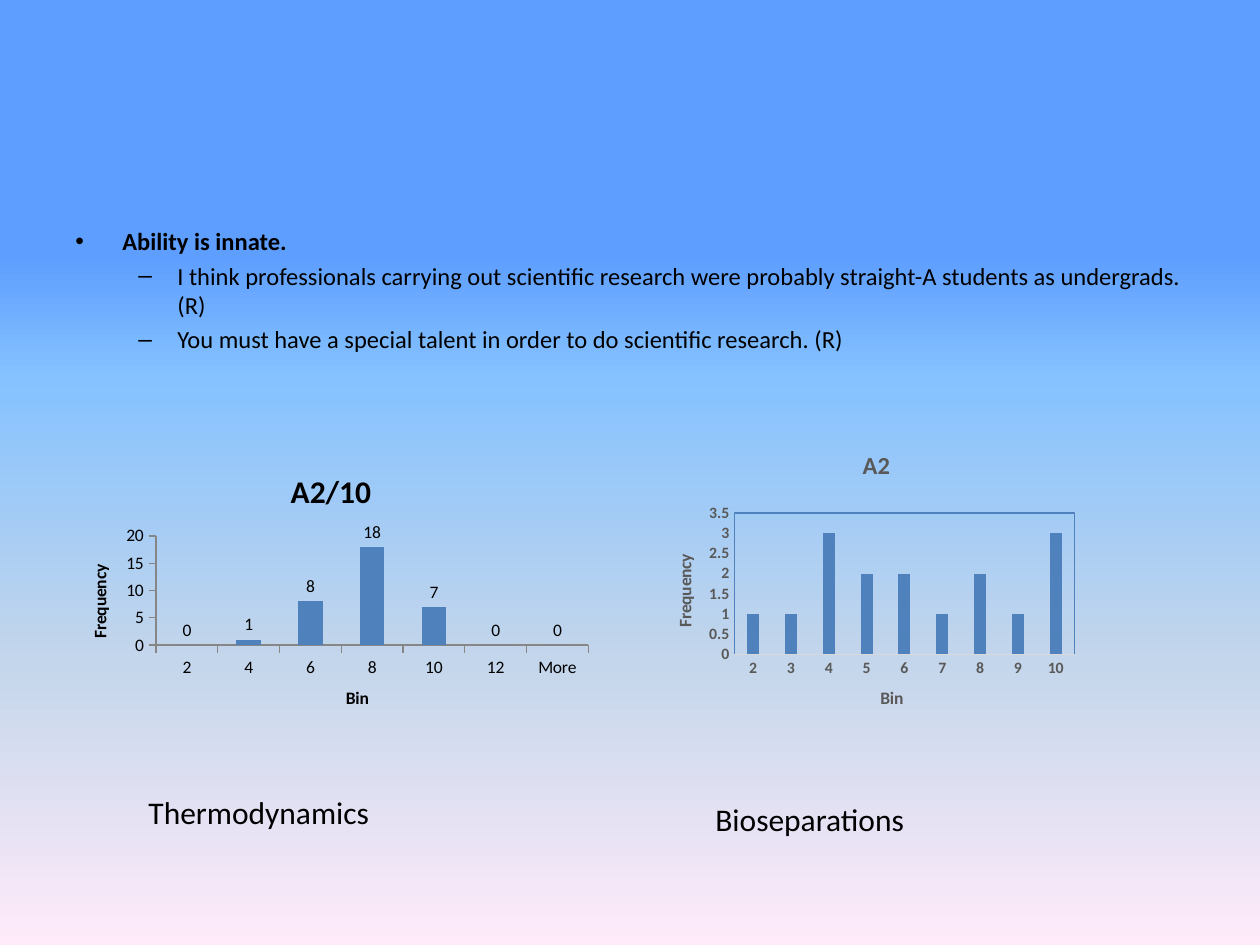
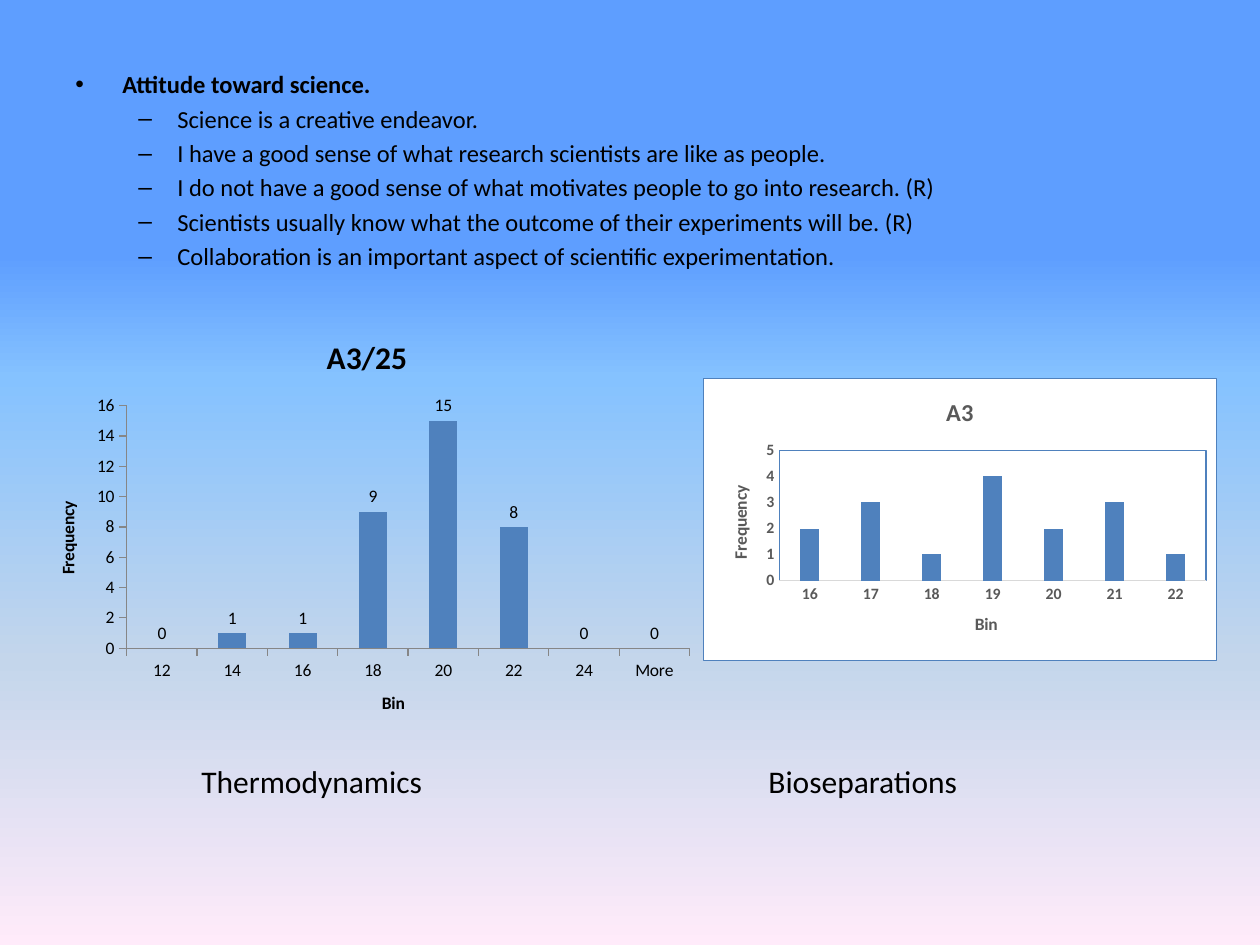
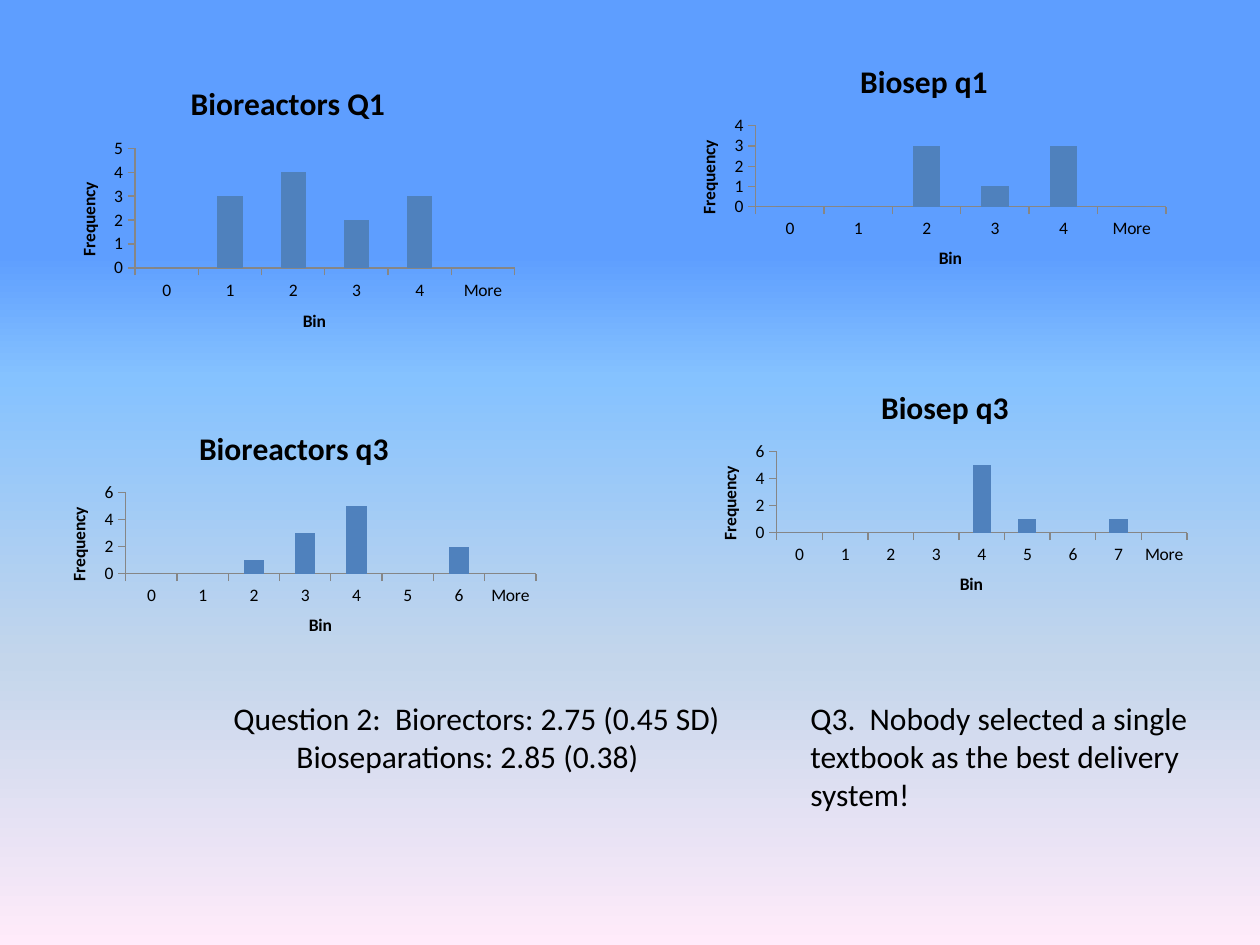
import pptx
import pptx.chart.data
import pptx.dml.color
import pptx.enum.chart
import pptx.enum.text
import pptx.oxml
import pptx.oxml.ns
import pptx.util
from dataclasses import dataclass

PX = 914400 / 126
NAMESPACES = pptx.oxml.ns.nsdecls("a", "c")
qn = pptx.oxml.ns.qn


@dataclass(frozen=True)
class Theme:
    font: str = "Calibri"
    ink: str = "000000"
    bar: str = "4F81BD"
    axis: str = "868686"
    sky: tuple = ((12, "5E9EFF"), (27, "5E9EFF"), (40, "85C2FF"),
                  (70, "C4D6EB"), (100, "FFEBFA"))
    caption_size: int = 18
    body_size: int = 14
    axis_title_size: int = 10


@dataclass(frozen=True)
class ChartStyle:
    ink: str
    title_size: int
    label_size: int
    bold_labels: bool
    gap: int
    overlap: int
    ticks: object
    category_line: str
    value_line: str
    plot_border: str


THEME = Theme()
TICK = pptx.enum.chart.XL_TICK_MARK
CLASSIC = ChartStyle(THEME.ink, 18, 10, False, 150, 0, TICK.OUTSIDE,
                     THEME.axis, THEME.axis, None)
MODERN = ChartStyle("595959", 14, 9, True, 219, -27, TICK.NONE,
                    "D9D9D9", None, THEME.bar)


# Shared helpers
def px(length):
    return pptx.util.Emu(round(length * PX))


def place(box):
    return [px(length) for length in box]


def rgb(value):
    return pptx.dml.color.RGBColor.from_string(value)


def style_font(font, size, color=THEME.ink, bold=False):
    font.name = THEME.font
    font.size = pptx.util.Pt(size)
    font.bold = bold
    font.color.rgb = rgb(color)


def paint_background(master):
    fill = master.background.fill
    fill.gradient()
    fill.gradient_angle = 270  # top to bottom
    stops = fill.gradient_stops[0]._gs.getparent()
    for stop in list(stops):
        stops.remove(stop)
    for percent, color in THEME.sky:
        stops.append(pptx.oxml.parse_xml(
            f'<a:gs {NAMESPACES} pos="{percent * 1000}"><a:srgbClr val="{color}"/></a:gs>'))


# Text
def add_text(slide, box, lines):
    frame = slide.shapes.add_textbox(*place(box)).text_frame
    frame.word_wrap = True
    for number, line in enumerate(lines):
        paragraph = frame.add_paragraph() if number else frame.paragraphs[0]
        paragraph.text = line
    return frame


def add_caption(slide, box, *lines):
    frame = add_text(slide, box, lines)
    frame.auto_size = pptx.enum.text.MSO_AUTO_SIZE.SHAPE_TO_FIT_TEXT
    for paragraph in frame.paragraphs:
        style_font(paragraph.font, THEME.caption_size)


def add_statements(slide, top, heading, *statements):
    frame = add_text(slide, (63, top, 1134, 624), (heading, *statements))
    for number, paragraph in enumerate(frame.paragraphs):
        is_heading = number == 0
        style_font(paragraph.font, THEME.body_size, bold=is_heading)
        paragraph.level = 0 if is_heading else 1
        paragraph.space_before = pptx.util.Pt(2.8)
        margin, hang, bullet = (47, 47, "•") if is_heading else (102, 39, "–")
        properties = paragraph._p.get_or_add_pPr()
        properties.set("marL", str(px(margin)))
        properties.set("indent", str(-px(hang)))
        properties.append(pptx.oxml.parse_xml(f'<a:buFont {NAMESPACES} typeface="Arial"/>'))
        properties.append(pptx.oxml.parse_xml(f'<a:buChar {NAMESPACES} char="{bullet}"/>'))


# Charts
def area_format(fill=None, border=None):
    def paint(color):
        if color:
            return f'<a:solidFill><a:srgbClr val="{color}"/></a:solidFill>'
        return "<a:noFill/>"
    return pptx.oxml.parse_xml(
        f'<c:spPr {NAMESPACES}>{paint(fill)}<a:ln w="9525">{paint(border)}</a:ln></c:spPr>')


def set_plot_layout(plot_area, layout):
    for old in plot_area.findall(qn("c:layout")):
        plot_area.remove(old)
    places = "".join(f'<c:{key} val="{value}"/>' for key, value in zip("xywh", layout))
    plot_area.insert(0, pptx.oxml.parse_xml(
        f'<c:layout {NAMESPACES}><c:manualLayout><c:layoutTarget val="inner"/>'
        f'<c:xMode val="edge"/><c:yMode val="edge"/>{places}</c:manualLayout></c:layout>'))


def set_title(owner, text, size, color):
    frame = owner.text_frame
    frame.text = text
    style_font(frame.paragraphs[0].font, size, color, True)
    return frame


def style_axis(axis, title, style, line):
    axis.has_major_gridlines = False
    axis.major_tick_mark = style.ticks
    axis.minor_tick_mark = TICK.NONE
    style_font(axis.tick_labels.font, style.label_size, style.ink, style.bold_labels)
    if line:
        axis.format.line.color.rgb = rgb(line)
        axis.format.line.width = pptx.util.Pt(0.75)
    else:
        axis.format.line.fill.background()
    return set_title(axis.axis_title, title, THEME.axis_title_size, style.ink)


def add_histogram(slide, box, title, bins, counts, style=CLASSIC, labels=False,
                  layout=None, fill=None, border=None):
    data = pptx.chart.data.CategoryChartData()
    data.categories = bins.split()
    data.add_series("Series 1", counts)
    chart = slide.shapes.add_chart(
        pptx.enum.chart.XL_CHART_TYPE.COLUMN_CLUSTERED, *place(box), data).chart
    style_font(chart.font, 10)
    chart.has_legend = False
    set_title(chart.chart_title, title, style.title_size, style.ink)

    style_axis(chart.category_axis, "Bin", style, style.category_line)
    frequency = style_axis(chart.value_axis, "Frequency", style, style.value_line)
    frequency._txBody.bodyPr.set("rot", "-5400000")
    frequency._txBody.bodyPr.set("vert", "horz")

    bars = chart.plots[0]
    bars.gap_width = style.gap
    bars.overlap = style.overlap
    bars.vary_by_categories = False
    bars.series[0].format.fill.solid()
    bars.series[0].format.fill.fore_color.rgb = rgb(THEME.bar)
    if labels:
        bars.has_data_labels = True
        bars.data_labels.show_value = True
        bars.data_labels.position = pptx.enum.chart.XL_LABEL_POSITION.OUTSIDE_END
        style_font(bars.data_labels.font, 10)

    chart_element = chart._chartSpace.find(qn("c:chart"))
    plot_area = chart_element.find(qn("c:plotArea"))
    if layout:
        set_plot_layout(plot_area, layout)
    plot_area.append(area_format(border=style.plot_border))
    chart_element.addnext(area_format(fill, border))


# Slides
def build_ability(slide):
    add_statements(
        slide, 220, "Ability is innate.",
        "I think professionals carrying out scientific research were probably "
        "straight-A students as undergrads. (R)",
        "You must have a special talent in order to do scientific research. (R)")
    add_histogram(slide, (63, 451, 536, 283), "A2/10", "2 4 6 8 10 12 More",
                  (0, 1, 8, 18, 7, 0, 0), labels=True)
    add_histogram(slide, (661, 431, 431, 283), "A2", "2 3 4 5 6 7 8 9 10",
                  (1, 1, 3, 2, 2, 1, 2, 1, 3), MODERN, layout=(0.17, 0.29, 0.79, 0.5))
    add_caption(slide, (136, 787, 462, 51), "Thermodynamics")
    add_caption(slide, (703, 794, 431, 51), "Bioseparations")


def build_attitude(slide):
    add_statements(
        slide, 63, "Attitude toward science.",
        "Science is a creative endeavor.",
        "I have a good sense of what research scientists are like as people.",
        "I do not have a good sense of what motivates people to go into research. (R)",
        "Scientists usually know what the outcome of their experiments will be. (R)",
        "Collaboration is an important aspect of scientific experimentation.")
    add_histogram(slide, (31, 315, 672, 425), "A3/25", "12 14 16 18 20 22 24 More",
                  (0, 1, 1, 9, 15, 8, 0, 0), labels=True)
    add_histogram(slide, (703, 378, 514, 283), "A3", "16 17 18 19 20 21 22",
                  (2, 3, 1, 4, 2, 3, 1), MODERN, fill="FFFFFF", border=THEME.bar)
    add_caption(slide, (189, 756, 368, 51), "Thermodynamics")
    add_caption(slide, (756, 756, 336, 51), "Bioseparations")


def build_questions(slide):
    for box, title, bins, counts in (
            ((52, 63, 472, 294), "Bioreactors Q1", "0 1 2 3 4 More", (0, 3, 4, 2, 3, 0)),
            ((42, 409, 504, 253), "Bioreactors q3", "0 1 2 3 4 5 6 More",
             (0, 0, 1, 3, 5, 0, 2, 0)),
            ((672, 42, 504, 253), "Biosep q1", "0 1 2 3 4 More", (0, 0, 3, 1, 3, 0)),
            ((693, 368, 504, 253), "Biosep q3", "0 1 2 3 4 5 6 7 More",
             (0, 0, 0, 0, 5, 1, 0, 1, 0))):
        add_histogram(slide, box, title, bins, counts)
    add_caption(slide, (221, 693, 651, 89), "Question 2:  Biorectors: 2.75 (0.45 SD)",
                "\tBioseparations: 2.85 (0.38)")
    add_caption(slide, (798, 693, 420, 127),
                "Q3.  Nobody selected a single textbook as the best delivery system!")


def main():
    deck = pptx.Presentation()
    deck.slide_width, deck.slide_height = px(1260), px(945)
    paint_background(deck.slide_master)
    for build in (build_ability, build_attitude, build_questions):
        build(deck.slides.add_slide(deck.slide_layouts[6]))
    deck.save("out.pptx")


if __name__ == "__main__":
    main()
